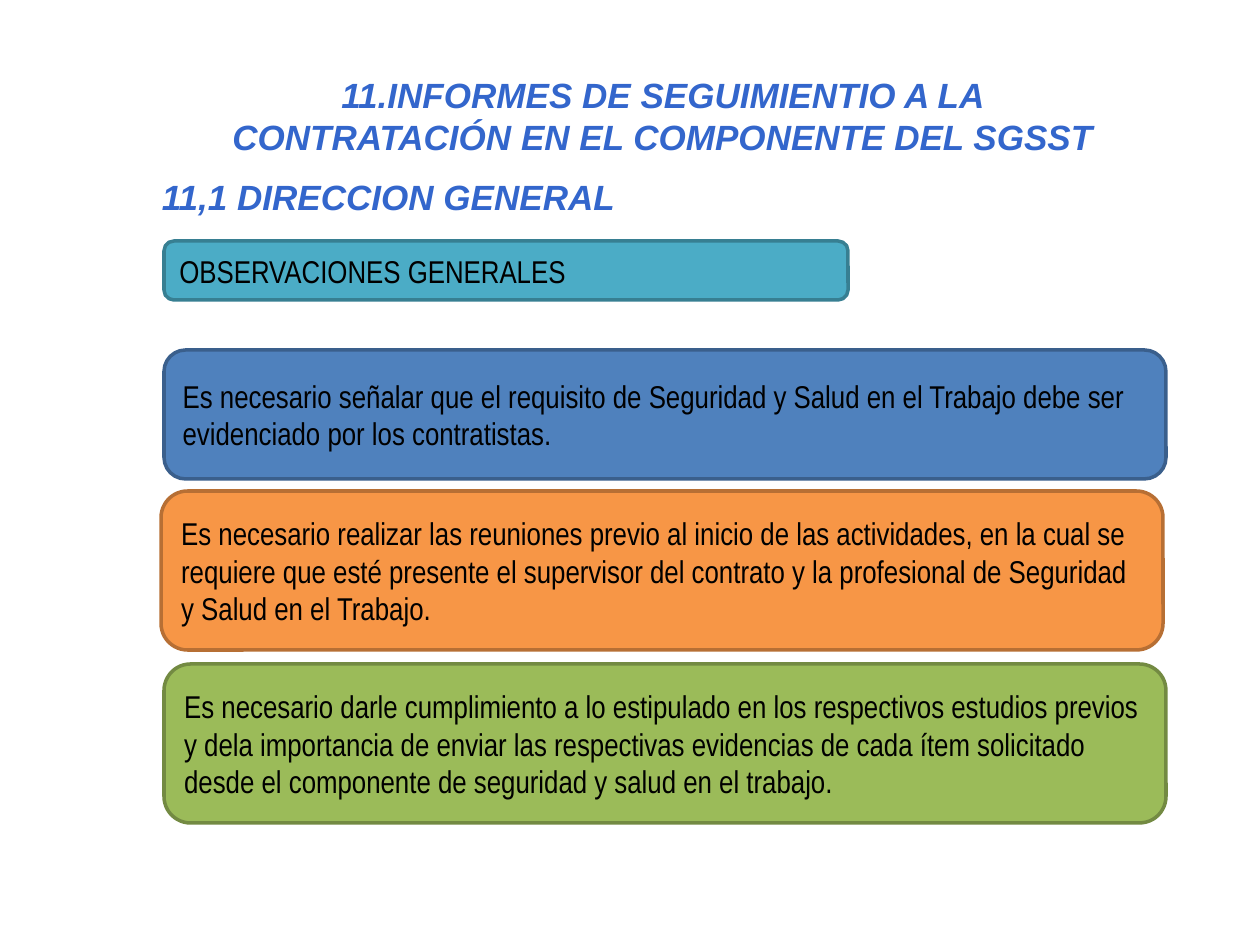
from dataclasses import dataclass

from pptx import Presentation
from pptx import util as u
from pptx.dml.color import RGBColor
from pptx.enum import shapes, text

PX = 914400 / 126


@dataclass(frozen=True)
class Theme:
    heading: str = "3366CC"
    body: str = "000000"
    teal: tuple = ("4BACC6", "377F92")
    blue: tuple = ("4F81BD", "3A5F8C")
    orange: tuple = ("F79646", "B76F34")
    green: tuple = ("9BBB59", "738A42")
    heading_font: str = "Arial"
    body_font: str = "Arial Narrow"
    heading_size: int = 20
    body_size: int = 18
    line_width: int = 2


THEME = Theme()


def px(*values):
    return [u.Emu(round(v * PX)) for v in values]


def rgb(value):
    return RGBColor.from_string(value)


def write(tf, paragraphs, align, font, size, color, emphasis=False):
    tf.word_wrap = True
    tf.text = "\n".join(paragraphs)
    for p in tf.paragraphs:
        p.alignment = align
        for r in p.runs:
            r.font.name = font
            r.font.size = u.Pt(size)
            r.font.color.rgb = rgb(color)
            r.font.bold = r.font.italic = emphasis


def add_heading(s, box, wording):
    sp = s.shapes.add_textbox(*px(*box))
    write(sp.text_frame, [wording], text.PP_ALIGN.CENTER, THEME.heading_font,
          THEME.heading_size, THEME.heading, emphasis=True)


def add_panel(s, box, colors, paragraphs):
    fill, line = colors
    sp = s.shapes.add_shape(shapes.MSO_SHAPE.ROUNDED_RECTANGLE, *px(*box))
    sp.shadow.inherit = False
    sp.fill.solid()
    sp.fill.fore_color.rgb = rgb(fill)
    sp.line.color.rgb = rgb(line)
    sp.line.width = u.Pt(THEME.line_width)
    sp.text_frame.vertical_anchor = text.MSO_ANCHOR.MIDDLE
    write(sp.text_frame, paragraphs, text.PP_ALIGN.LEFT, THEME.body_font,
          THEME.body_size, THEME.body)


def main():
    prs = Presentation()
    prs.slide_width, prs.slide_height = px(1260, 945)
    s = prs.slides.add_slide(prs.slide_layouts[6])

    add_heading(s, (186, 67, 953, 59),
                "11.INFORMES DE SEGUIMIENTIO A LA CONTRATACIÓN "
                "EN EL COMPONENTE DEL SGSST")
    add_heading(s, (-88, 169, 953, 59), "11,1 DIRECCION GENERAL")

    add_panel(s, (164, 241, 684, 59), THEME.teal, ["OBSERVACIONES GENERALES"])
    add_panel(s, (164, 350, 1002, 129), THEME.blue, [
        "Es necesario señalar que el requisito de Seguridad y Salud "
        "en el Trabajo debe ser",
        "evidenciado por los contratistas."])
    add_panel(s, (161, 491, 1002, 159), THEME.orange, [
        "Es necesario realizar las reuniones previo al inicio de las "
        "actividades, en la cual se",
        "requiere que esté presente el supervisor del contrato y la "
        "profesional de Seguridad y Salud en el Trabajo."])
    add_panel(s, (164, 664, 1002, 159), THEME.green, [
        "Es necesario darle cumplimiento a lo estipulado en los respectivos "
        "estudios previos y dela importancia de enviar las respectivas "
        "evidencias de cada ítem solicitado desde el componente de "
        "seguridad y salud en el trabajo."])

    prs.save("out.pptx")


if __name__ == "__main__":
    main()
